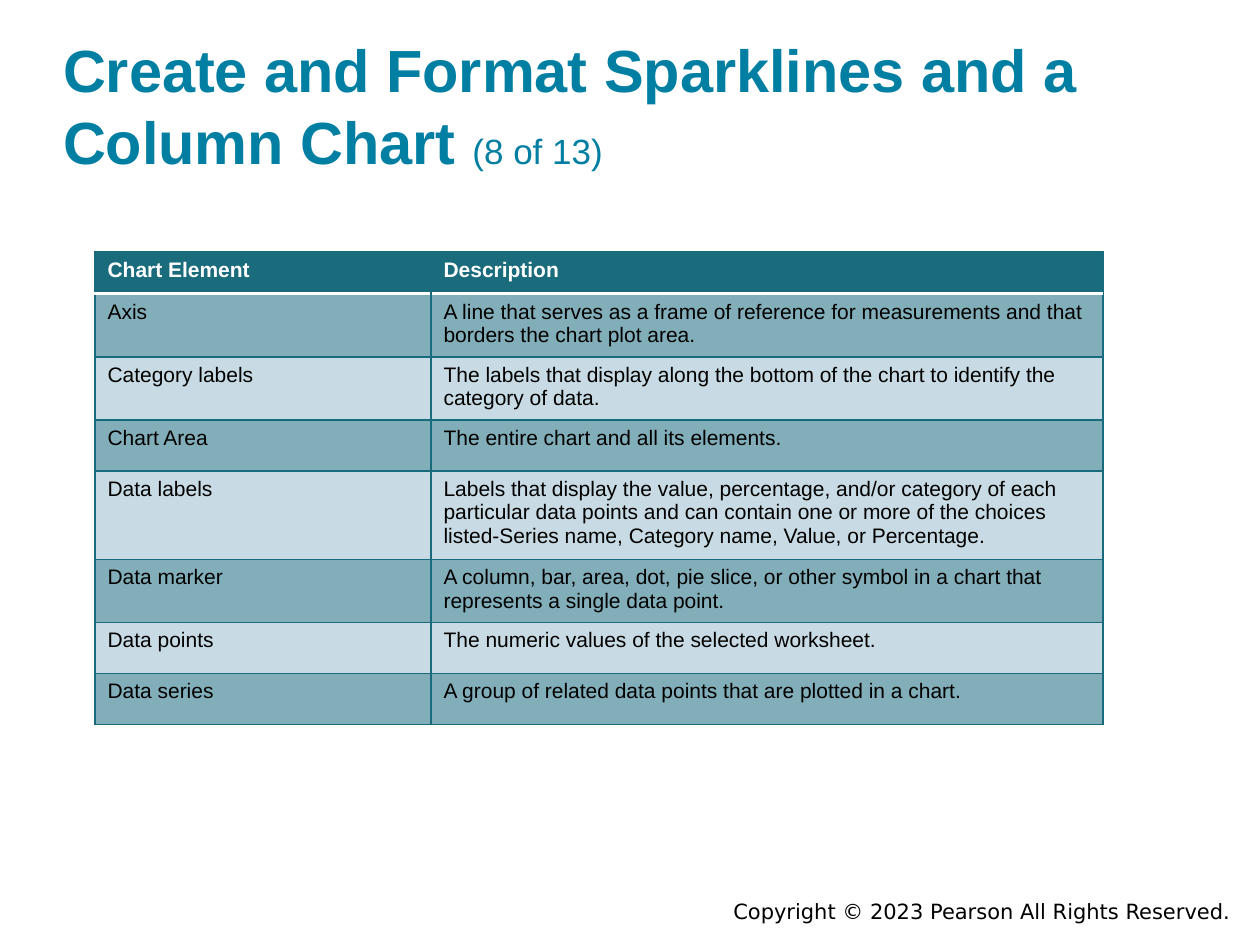
from pptx import Presentation
from pptx.dml.color import RGBColor
from pptx.enum.text import MSO_ANCHOR, MSO_AUTO_SIZE, PP_ALIGN
from pptx.oxml import parse_xml
from pptx.oxml.ns import nsdecls
from pptx.util import Emu, Pt

PIXEL = 914400 // 126
WHITE = RGBColor(0xFF, 0xFF, 0xFF)
BLACK = RGBColor(0x00, 0x00, 0x00)
TITLE_BLUE = RGBColor(0x00, 0x7F, 0xA3)
HEADER_TEAL = RGBColor(0x1A, 0x6C, 0x7C)
BORDER_TEAL = RGBColor(0x17, 0x6B, 0x7C)
DARK_BAND = RGBColor(0x82, 0xAE, 0xBA)
LIGHT_BAND = RGBColor(0xC8, 0xDB, 0xE4)

COLUMN_WIDTHS = (336, 672)
HEADER_HEIGHT = 42
ROW_HEIGHT = 51
ROWS = (
    ("Chart Element", "Description"),
    ("Axis", "A line that serves as a frame of reference for measurements "
             "and that borders the chart plot area."),
    ("Category labels", "The labels that display along the bottom of the chart "
                        "to identify the category of data."),
    ("Chart Area", "The entire chart and all its elements."),
    ("Data labels", "Labels that display the value, percentage, and/or category of each "
                    "particular data points and can contain one or more of the choices "
                    "listed-Series name, Category name, Value, or Percentage."),
    ("Data marker", "A column, bar, area, dot, pie slice, or other symbol in a chart "
                    "that represents a single data point."),
    ("Data points", "The numeric values of the selected worksheet."),
    ("Data series", "A group of related data points that are plotted in a chart."),
)


def px(length):
    return Emu(length * PIXEL)


def add_run(paragraph, text, size=12, font="Arial", color=BLACK, bold=False):
    run = paragraph.add_run()
    run.text = text
    run.font.size = Pt(size)
    run.font.name = font
    run.font.bold = bold
    run.font.color.rgb = color


def set_title(slide):
    title = slide.shapes.title
    title.left, title.top, title.width, title.height = px(63), px(25), px(1134), px(151)
    frame = title.text_frame
    frame.margin_left = frame.margin_top = frame.margin_right = frame.margin_bottom = 0
    frame.word_wrap = True
    frame.auto_size = MSO_AUTO_SIZE.NONE
    frame.vertical_anchor = MSO_ANCHOR.BOTTOM
    paragraph = frame.paragraphs[0]
    paragraph.alignment = PP_ALIGN.LEFT
    add_run(paragraph, "Create and Format Sparklines and a Column Chart ",
            size=34, color=TITLE_BLUE, bold=True)
    add_run(paragraph, "(8 of 13)", size=20, color=TITLE_BLUE)


def set_borders(cell, **borders):
    properties = cell._tc.get_or_add_tcPr()
    for index, side in enumerate(("L", "R", "T", "B")):
        color, width = borders.get(side, (BORDER_TEAL, 0.75))
        properties.insert(index, parse_xml(
            f'<a:ln{side} {nsdecls("a")} w="{Pt(width)}">'
            f'<a:solidFill><a:srgbClr val="{color}"/></a:solidFill></a:ln{side}>'))


def fill_cell(cell, text, row_index, column_index):
    is_header = row_index == 0
    cell.fill.solid()
    if is_header:
        cell.fill.fore_color.rgb = HEADER_TEAL
        inner_side = "R" if column_index == 0 else "L"
        set_borders(cell, B=(WHITE, 2), **{inner_side: (HEADER_TEAL, 0.75)})
    else:
        cell.fill.fore_color.rgb = DARK_BAND if row_index % 2 else LIGHT_BAND
        set_borders(cell, **({"T": (WHITE, 2)} if row_index == 1 else {}))
    add_run(cell.text_frame.paragraphs[0], text,
            color=WHITE if is_header else BLACK, bold=is_header)


def add_elements_table(slide):
    height = HEADER_HEIGHT + ROW_HEIGHT * (len(ROWS) - 1)
    table = slide.shapes.add_table(len(ROWS), len(COLUMN_WIDTHS), px(95), px(252),
                                   px(sum(COLUMN_WIDTHS)), px(height)).table
    for column, width in zip(table.columns, COLUMN_WIDTHS):
        column.width = px(width)
    for row_index, texts in enumerate(ROWS):
        table.rows[row_index].height = px(ROW_HEIGHT if row_index else HEADER_HEIGHT)
        for column_index, text in enumerate(texts):
            fill_cell(table.cell(row_index, column_index), text, row_index, column_index)


def add_copyright(slide):
    frame = slide.shapes.add_textbox(px(399), px(892), px(844), px(38)).text_frame
    frame.word_wrap = True
    paragraph = frame.paragraphs[0]
    paragraph.alignment = PP_ALIGN.RIGHT
    add_run(paragraph, "Copyright © 2023 Pearson All Rights Reserved.", font="DejaVu Sans")


def main():
    presentation = Presentation()
    presentation.slide_width, presentation.slide_height = px(1260), px(945)
    slide = presentation.slides.add_slide(presentation.slide_layouts[5])
    add_copyright(slide)
    set_title(slide)
    add_elements_table(slide)
    presentation.save("out.pptx")


if __name__ == "__main__":
    main()
